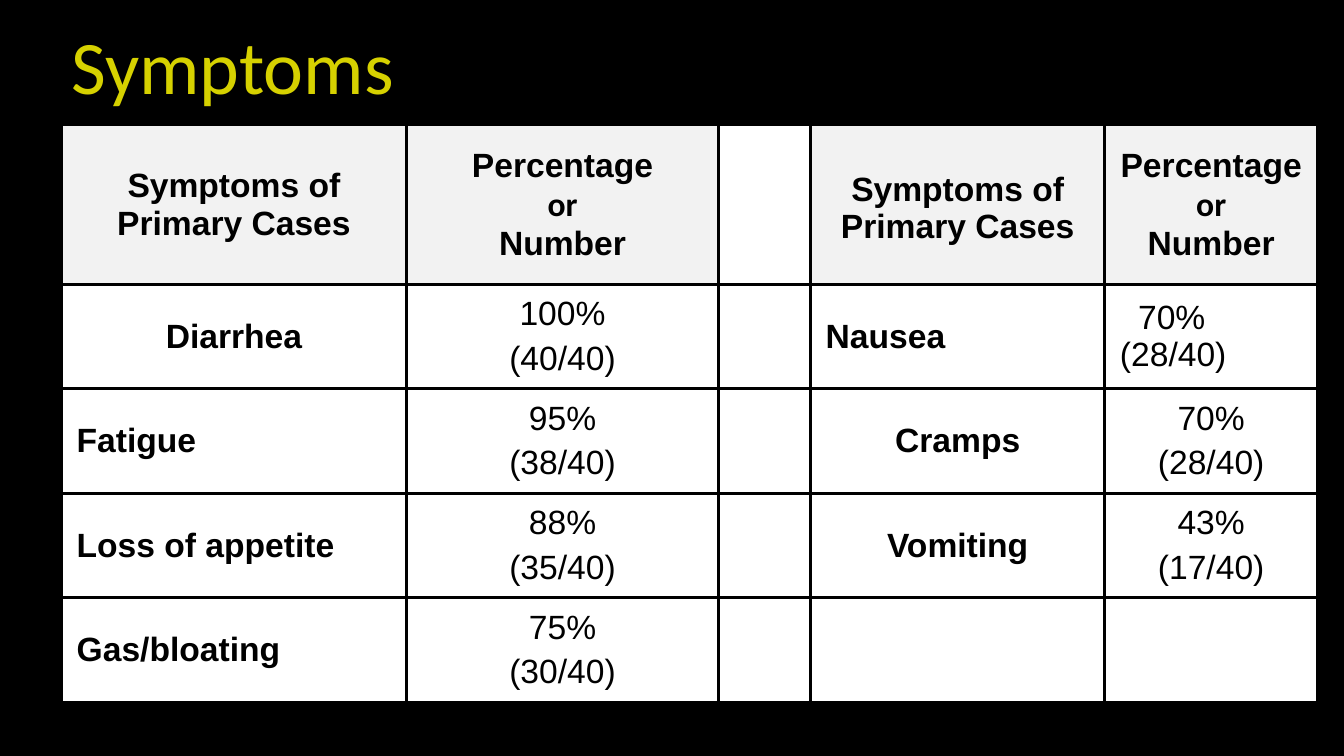
import dataclasses

import lxml.etree
import pptx
import pptx.dml.color
import pptx.enum.text
import pptx.oxml
import pptx.oxml.ns
import pptx.util

ALIGN = pptx.enum.text.PP_ALIGN
MIDDLE = pptx.enum.text.MSO_ANCHOR.MIDDLE
BLACK, WHITE, GREY, GOLD = "000000", "FFFFFF", "F2F2F2", "D6D100"

deck = pptx.Presentation()
deck.slide_width = pptx.util.Inches(13.33)
deck.slide_height = pptx.util.Inches(7.5)


@dataclasses.dataclass
class Line:
    text: str
    font: str = "Arial"
    inset: float = 0  # percent of slide width


@dataclasses.dataclass
class Cell:
    lines: tuple[Line, ...] = ()
    fill: str = WHITE
    bold: bool = False
    align: ALIGN = ALIGN.CENTER
    gap: float = 0
    top: float = 1.07  # percent of slide height


def wide(share: float) -> int:
    """Percent of the slide's width."""
    return round(deck.slide_width * share / 100)


def high(share: float) -> int:
    """Percent of the slide's height."""
    return round(deck.slide_height * share / 100)


def paint(code: str) -> pptx.dml.color.RGBColor:
    return pptx.dml.color.RGBColor.from_string(code)


def write(frame, lines, *, size=24, color=BLACK, bold=False,
          align=ALIGN.CENTER, gap=0, pitch=None) -> None:
    frame.word_wrap = True
    for num, line in enumerate(lines):
        para = frame.add_paragraph() if num else frame.paragraphs[0]
        para.alignment = align
        para.line_spacing = pitch
        if num and gap:
            para.space_before = pptx.util.Pt(gap)
        if line.inset:
            props = para._p.get_or_add_pPr()
            props.set("marL", str(wide(line.inset)))
            props.set("indent", "0")
        run = para.add_run()
        run.text = line.text
        run.font.name = line.font
        run.font.size = pptx.util.Pt(size)
        run.font.bold = bold
        run.font.color.rgb = paint(color)


def edge(cell, color: str = BLACK, width: float = 2.25) -> None:
    """Draw all four borders of a table cell."""
    props = cell._tc.get_or_add_tcPr()
    for spot, side in enumerate("LRTB"):
        line = pptx.oxml.parse_xml(
            f'<a:ln{side} {pptx.oxml.ns.nsdecls("a")} w="{pptx.util.Pt(width)}">'
            f'<a:solidFill><a:srgbClr val="{color}"/></a:solidFill></a:ln{side}>')
        props.insert(spot, line)


def fill_cell(cell, data: Cell) -> None:
    cell.fill.solid()
    cell.fill.fore_color.rgb = paint(data.fill)
    edge(cell)
    cell.vertical_anchor = MIDDLE
    cell.margin_left = cell.margin_right = wide(1.13)
    cell.margin_top, cell.margin_bottom = high(data.top), high(1.07)
    write(cell.text_frame, data.lines, bold=data.bold, align=data.align, gap=data.gap)


def head(*lines: Line, top: float = 1.07) -> Cell:
    return Cell(lines, GREY, True, top=top)


def label(text: str, align: ALIGN = ALIGN.LEFT) -> Cell:
    return Cell((Line(text),), bold=True, align=align)


def count(rate: str, cases: int) -> Cell:
    return Cell((Line(rate), Line(f"({cases}/40)")), gap=5)


# Table content
COLS = (25.65, 23.25, 6.83, 21.9, 15.83)
ROWS = (21.07,) + (13.83,) * 4
CASES = Line("Symptoms of Primary Cases")
RATE = (Line("Percentage"), Line("or", "Calibri"), Line("Number"))
BLANK = Cell()
NAUSEA = Cell((Line("70%", inset=1.35), Line("(28/40)")), align=ALIGN.LEFT)
GRID = (
    (head(CASES), head(*RATE), BLANK, head(CASES, top=2), head(*RATE)),
    (label("Diarrhea", ALIGN.CENTER), count("100%", 40), BLANK,
     label("Nausea"), NAUSEA),
    (label("Fatigue"), count("95%", 38), BLANK,
     label("Cramps", ALIGN.CENTER), count("70%", 28)),
    (label("Loss of appetite"), count("88%", 35), BLANK,
     label("Vomiting", ALIGN.CENTER), count("43%", 17)),
    (label("Gas/bloating"), count("75%", 30), BLANK, BLANK, BLANK),
)


def main() -> None:
    # Black slide
    slide = deck.slides.add_slide(deck.slide_layouts[5])
    slide.background.fill.solid()
    slide.background.fill.fore_color.rgb = paint(BLACK)

    # Title
    title = slide.shapes.title
    title.left, title.top = wide(4.58), high(2)
    title.width, title.height = wide(86.25), high(14.4)
    title.text_frame.auto_size = pptx.enum.text.MSO_AUTO_SIZE.NONE
    title.text_frame.vertical_anchor = MIDDLE
    write(title.text_frame, (Line("Symptoms", "Calibri"),), size=54,
          color=GOLD, align=ALIGN.LEFT, pitch=0.9)

    # Table
    table = slide.shapes.add_table(
        len(ROWS), len(COLS), wide(4.58), high(16.53),
        wide(sum(COLS)), high(sum(ROWS))).table
    table.first_row = table.horz_banding = False
    for col, share in zip(table.columns, COLS):
        col.width = wide(share)
    for row, share, cells in zip(table.rows, ROWS, GRID):
        row.height = high(share)
        for cell, data in zip(row.cells, cells):
            fill_cell(cell, data)

    deck.save("out.pptx")


if __name__ == "__main__":
    main()
